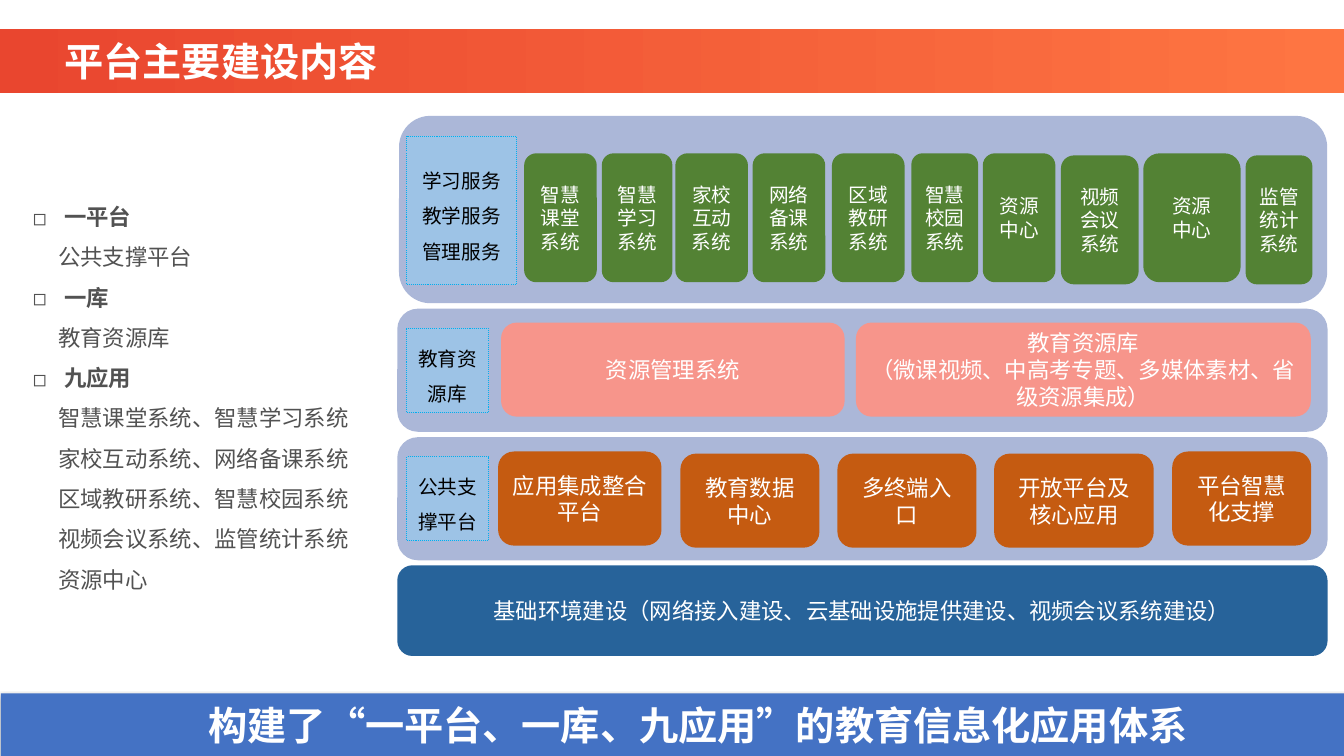
"""Build the slide on the platform's main construction content."""
import lxml.etree
import pptx
import pptx.dml.color
import pptx.enum.dml
import pptx.enum.shapes
import pptx.enum.text
import pptx.oxml.ns
import pptx.util

THEME = {
    "title_from": "E9462F", "title_to": "FE7542", "layer": "ABB7D8",
    "label": "9DC3E6", "label_line": "00B0F0", "app": "538234",
    "library": "F7958B", "platform": "C55B11", "base": "27639A",
    "summary": "4472C4", "white": "FFFFFF", "black": "000000", "body": "525252",
    "heading": 28, "normal": 16, "small": 14,
    "cjk": "Noto Sans CJK SC", "latin": "Arial",
}
RECT = pptx.enum.shapes.MSO_SHAPE.RECTANGLE
ROUNDED = pptx.enum.shapes.MSO_SHAPE.ROUNDED_RECTANGLE
CENTER = pptx.enum.text.PP_ALIGN.CENTER
qn = pptx.oxml.ns.qn
rgb = pptx.dml.color.RGBColor.from_string

deck = pptx.Presentation()
deck.slide_width = pptx.util.Inches(13.33)
deck.slide_height = pptx.util.Inches(7.5)
COL = deck.slide_width / 160
ROW = deck.slide_height / 90
slide = deck.slides.add_slide(deck.slide_layouts[6])


def block(form, left, top, width, height, fill):
    """Place a filled shape given in grid columns and rows."""
    shape = slide.shapes.add_shape(
        form, int(left * COL), int(top * ROW), int(width * COL), int(height * ROW))
    shape.shadow.inherit = False
    shape.line.fill.background()
    shape.fill.solid()
    shape.fill.fore_color.rgb = rgb(THEME[fill])
    return shape


def write(shape, text, size, color="white", font="cjk", bold=False, align=CENTER, spacing=None):
    """Fill a shape with text and format its runs."""
    shape.text_frame.text = text
    shape.text_frame.word_wrap = True
    for paragraph in shape.text_frame.paragraphs:
        paragraph.alignment = align
        paragraph.line_spacing = spacing
        for run in paragraph.runs:
            run.font.size = pptx.util.Pt(THEME[size])
            run.font.bold = bold
            run.font.color.rgb = rgb(THEME[color])
            run.font.name = THEME[font]
            east_asian = lxml.etree.SubElement(run.font._element, qn("a:ea"))
            east_asian.set("typeface", THEME["cjk"])


title_bar = block(RECT, 0, 3.5, 160, 7.6, "title_from")
title_bar.fill.gradient()
title_bar.fill.gradient_angle = 0
for stop, color in zip(title_bar.fill.gradient_stops, ("title_from", "title_to")):
    stop.color.rgb = rgb(THEME[color])
title = slide.shapes.add_textbox(
    int(6.5 * COL), int(3.85 * ROW), int(123.6 * COL), int(6.85 * ROW))
write(title, "平台主要建设内容", "heading", bold=True, align=None)

outline = [
    ("一平台", ["公共支撑平台"]),
    ("一库", ["教育资源库"]),
    ("九应用", ["智慧课堂系统、智慧学习系统", "家校互动系统、网络备课系统",
             "区域教研系统、智慧校园系统", "视频会议系统、监管统计系统", "资源中心"]),
]
headings = [heading for heading, _ in outline]
lines = [line for heading, items in outline for line in (heading, *items)]
summary_list = slide.shapes.add_textbox(
    int(2.75 * COL), int(22 * ROW), int(51.85 * COL), int(49.6 * ROW))
write(summary_list, "\n".join(lines), "normal", "body", align=None, spacing=1.5)
for paragraph in summary_list.text_frame.paragraphs:
    properties = paragraph._p.get_or_add_pPr()
    if paragraph.text in headings:
        properties.set("marL", str(pptx.util.Inches(0.31)))
        properties.set("indent", str(-pptx.util.Inches(0.31)))
        lxml.etree.SubElement(properties, qn("a:buFont")).set("typeface", THEME["cjk"])
        lxml.etree.SubElement(properties, qn("a:buChar")).set("char", "◻")
        paragraph.runs[0].font.bold = True
    else:
        properties.set("marL", str(pptx.util.Inches(0.25)))

layers = [
    (47.5, 13.8, 110.5, 22.3, 16.2, 13.1, 17.65, "学习服务教学服务管理服务"),
    (47.3, 36.75, 110.75, 14.65, 39.1, 9.75, 10, "教育资源库"),
    (47.3, 52.05, 110.75, 14.65, 54.35, 9.75, 10, "公共支撑平台"),
]
for left, top, width, height, label_top, label_width, label_height, name in layers:
    block(ROUNDED, left, top, width, height, "layer")
    label = block(RECT, 48.4, label_top, label_width, label_height, "label")
    label.line.color.rgb = rgb(THEME["label_line"])
    label.line.width = pptx.util.Pt(0.75)
    label.line.dash_style = pptx.enum.dml.MSO_LINE.ROUND_DOT
    write(label, name, "small", "black", spacing=1.5)

modules_by_layer = [
    ("app", "small", 15.35, [
        (62.4, 18.25, 8.65, "智慧课堂系统"), (71.65, 18.25, 8.4, "智慧学习系统"),
        (80.4, 18.25, 8.65, "家校互动系统"), (89.6, 18.25, 8.65, "网络备课系统"),
        (99.05, 18.25, 8.65, "区域教研系统"), (108.5, 18.25, 7.95, "智慧校园系统"),
        (117, 18.25, 8.65, "资源中心"), (126.3, 18.5, 9.25, "视频会议\n系统"),
        (136.1, 18.25, 11.6, "资源\n中心"), (148.3, 18.5, 7.95, "监管统计系统")]),
    ("library", "normal", 11.2, [
        (59.65, 38.4, 40.9, "资源管理系统"),
        (101.9, 38.4, 54.15, "教育资源库\n（微课视频、中高考专题、多媒体素材、省级资源集成）")]),
    ("platform", "normal", 11.2, [
        (59.3, 53.75, 19.45, "应用集成整合平台"), (81, 54, 16.55, "教育数据中心"),
        (99.7, 54, 16.55, "多终端入口"), (118.35, 54, 19, "开放平台及核心应用"),
        (139.55, 53.75, 16.55, "平台智慧化支撑")]),
    ("base", "normal", 10.8, [
        (47.3, 67.3, 110.75, "基础环境建设（网络接入建设、云基础设施提供建设、视频会议系统建设）")]),
]
for fill, size, height, entries in modules_by_layer:
    for left, top, width, name in entries:
        write(block(ROUNDED, left, top, width, height, fill), name, size, font="latin")

conclusion = block(RECT, 0.1, 82.55, 160, 7.45, "summary")
write(conclusion, "构建了“一平台、一库、九应用”的教育信息化应用体系", "heading", bold=True)
conclusion.text_frame.paragraphs[0]._p.get_or_add_pPr().set("marL", str(pptx.util.Inches(0.5)))
effects = conclusion._element.spPr.find(qn("a:effectLst"))
shadow = lxml.etree.SubElement(
    effects, qn("a:outerShdw"), blurRad=str(pptx.util.Pt(3.1)),
    dist=str(pptx.util.Pt(1.8)), dir="5400000", rotWithShape="0")
shadow_color = lxml.etree.SubElement(shadow, qn("a:srgbClr"), val=THEME["black"])
lxml.etree.SubElement(shadow_color, qn("a:alpha"), val="35000")

deck.save("out.pptx")
